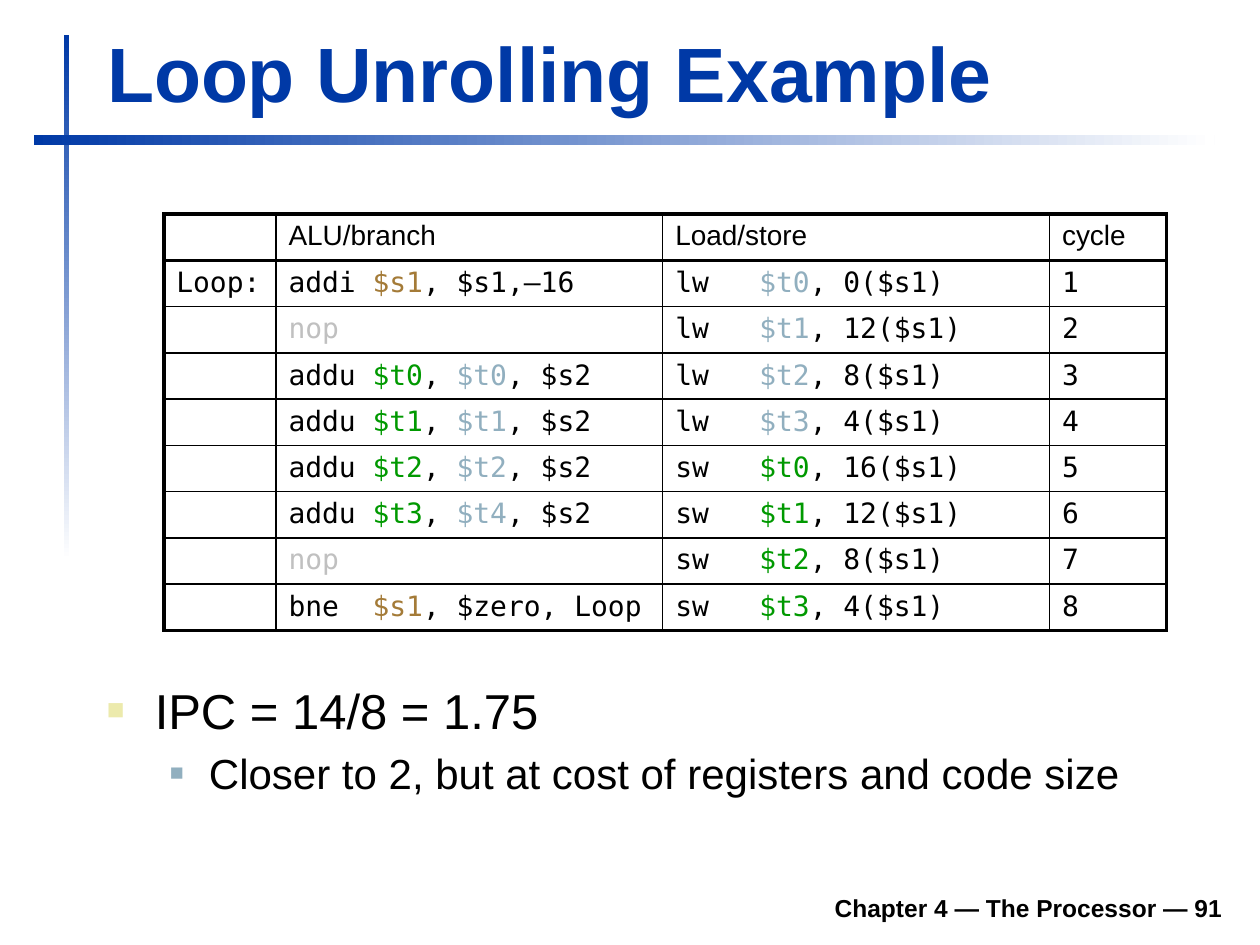
from lxml import etree
from pptx import Presentation
from pptx.dml.color import RGBColor
from pptx.enum.shapes import MSO_SHAPE
from pptx.enum.text import MSO_ANCHOR, PP_ALIGN
from pptx.oxml.ns import qn
from pptx.util import Inches, Pt

RECTANGLE = MSO_SHAPE.RECTANGLE
BOTTOM = MSO_ANCHOR.BOTTOM
RIGHT = PP_ALIGN.RIGHT

SANS, MONO = "Arial", "DejaVu Sans Mono"
BLUE, WHITE, BLACK = "0039A6", "FFFFFF", "000000"
BROWN, STEEL, GREEN, GREY, YELLOW = "A47B38", "91AFBF", "009900", "C0C0C0", "ECEAAC"

# Content
TITLE = "Loop Unrolling Example"
FOOTER = "Chapter 4 — The Processor — 91"
HEADERS = ["", "ALU/branch", "Load/store", "cycle"]
NOP = [("nop", GREY)]


def add_upper(target, source):
    return [("addu ", BLACK), (target, GREEN), (", ", BLACK), (source, STEEL), (", $s2", BLACK)]


# ALU/branch runs, then load/store as operation, register, address
SCHEDULE = [
    ([("addi ", BLACK), ("$s1", BROWN), (", $s1,–16", BLACK)], ("lw", "$t0", "0($s1)")),
    (NOP, ("lw", "$t1", "12($s1)")),
    (add_upper("$t0", "$t0"), ("lw", "$t2", "8($s1)")),
    (add_upper("$t1", "$t1"), ("lw", "$t3", "4($s1)")),
    (add_upper("$t2", "$t2"), ("sw", "$t0", "16($s1)")),
    (add_upper("$t3", "$t4"), ("sw", "$t1", "12($s1)")),
    (NOP, ("sw", "$t2", "8($s1)")),
    ([("bne  ", BLACK), ("$s1", BROWN), (", $zero, Loop", BLACK)], ("sw", "$t3", "4($s1)")),
]
MEMORY_COLORS = {"lw": STEEL, "sw": GREEN}

# Text, size, left margin, hanging indent, bullet colour, bullet size in percent
BULLETS = [
    ("IPC = 14/8 = 1.75", 28, 0.38, 0.38, YELLOW, 60),
    ("Closer to 2, but at cost of registers and code size", 24, 0.81, 0.31, STEEL, 55),
]
BARS = [((0.51, 0.28, 0.04, 4.17), 270), ((0.27, 1.07, 9.37, 0.08), 0)]
COLUMN_WIDTHS = [0.89, 3.07, 3.07, 0.93]
ROW_HEIGHT = 0.35


def color(value):
    return RGBColor.from_string(value)


def box(values):
    return [Inches(value) for value in values]


def add_run(paragraph, text, size, value=BLACK, font=SANS, bold=False):
    run = paragraph.add_run()
    run.text = text
    run.font.size = Pt(size)
    run.font.name = font
    run.font.bold = bold
    run.font.color.rgb = color(value)


def add_text_box(slide, place):
    text_frame = slide.shapes.add_textbox(*box(place)).text_frame
    text_frame.word_wrap = True
    return text_frame


def set_bullet(paragraph, left, hanging, value, percent):
    properties = paragraph._p.get_or_add_pPr()
    properties.set("marL", str(Inches(left)))
    properties.set("indent", str(-Inches(hanging)))
    bullet_color = etree.SubElement(properties, qn("a:buClr"))
    etree.SubElement(bullet_color, qn("a:srgbClr"), val=value)
    etree.SubElement(properties, qn("a:buSzPct"), val=str(percent * 1000))
    etree.SubElement(properties, qn("a:buFont"), typeface=SANS)
    etree.SubElement(properties, qn("a:buChar"), char="■")


def set_borders(cell, widths):
    properties = cell._tc.get_or_add_tcPr()
    for side, width in zip("LRTB", widths):
        line = etree.SubElement(properties, qn("a:ln" + side), w=str(Pt(width)))
        fill = etree.SubElement(line, qn("a:solidFill"))
        etree.SubElement(fill, qn("a:srgbClr"), val=BLACK)


presentation = Presentation()
presentation.slide_width, presentation.slide_height = Inches(10), Inches(7.5)
slide = presentation.slides.add_slide(presentation.slide_layouts[5])

# Gradient bars
for place, angle in BARS:
    bar = slide.shapes.add_shape(RECTANGLE, *box(place))
    bar.shadow.inherit = False
    bar.line.fill.background()
    bar.fill.gradient()
    bar.fill.gradient_angle = angle
    for stop, value in zip(bar.fill.gradient_stops, (BLUE, WHITE)):
        stop.color.rgb = color(value)

# Title
title = slide.shapes.title
title.left, title.top, title.width, title.height = box((0.75, 0.16, 9.03, 0.83))
title.text_frame.vertical_anchor = BOTTOM
title.text_frame.paragraphs[0].alignment = PP_ALIGN.LEFT
add_run(title.text_frame.paragraphs[0], TITLE, 44, BLUE, bold=True)

# Footer
footer = add_text_box(slide, (1.85, 6.98, 7.95, 0.39))
footer.vertical_anchor = BOTTOM
footer.paragraphs[0].alignment = RIGHT
add_run(footer.paragraphs[0], FOOTER, 14, bold=True)

# Bullets
body = add_text_box(slide, (0.75, 5.35, 9.05, 1.47))
for index, (text, size, left, hanging, value, percent) in enumerate(BULLETS):
    paragraph = body.add_paragraph() if index else body.paragraphs[0]
    paragraph.level = index
    paragraph.space_before = Pt(size * 0.2)
    set_bullet(paragraph, left, hanging, value, percent)
    add_run(paragraph, text, size)

# Schedule table
rows = [[[(header, BLACK)] if header else [] for header in HEADERS]]
for cycle, (alu, (operation, register, address)) in enumerate(SCHEDULE, 1):
    label = [("Loop:", BLACK)] if cycle == 1 else []
    memory = [(operation + "   ", BLACK), (register, MEMORY_COLORS[operation]),
              (", " + address, BLACK)]
    rows.append([label, alu, memory, [(str(cycle), BLACK)]])

last_row, last_column = len(rows) - 1, len(HEADERS) - 1
table = slide.shapes.add_table(
    len(rows), len(HEADERS),
    *box((1.3, 1.7, sum(COLUMN_WIDTHS), ROW_HEIGHT * len(rows)))).table
table.first_row = table.horz_banding = False
for column, width in zip(table.columns, COLUMN_WIDTHS):
    column.width = Inches(width)
for row_index, row in enumerate(rows):
    table.rows[row_index].height = Inches(ROW_HEIGHT)
    for column_index, runs in enumerate(row):
        cell = table.cell(row_index, column_index)
        set_borders(cell, (
            2.25 if column_index == 0 else 1,
            2.25 if column_index == last_column else 1,
            {0: 2.25, 1: 1.5}.get(row_index, 1),
            {0: 1.5, last_row: 2.25}.get(row_index, 1)))
        cell.fill.background()
        paragraph = cell.text_frame.paragraphs[0]
        for text, value in runs:
            add_run(paragraph, text, 16, value, MONO if row_index else SANS)
        if not runs:  # keeps empty cells from stretching the row
            etree.SubElement(paragraph._p, qn("a:endParaRPr"), sz="1600")

presentation.save("out.pptx")
